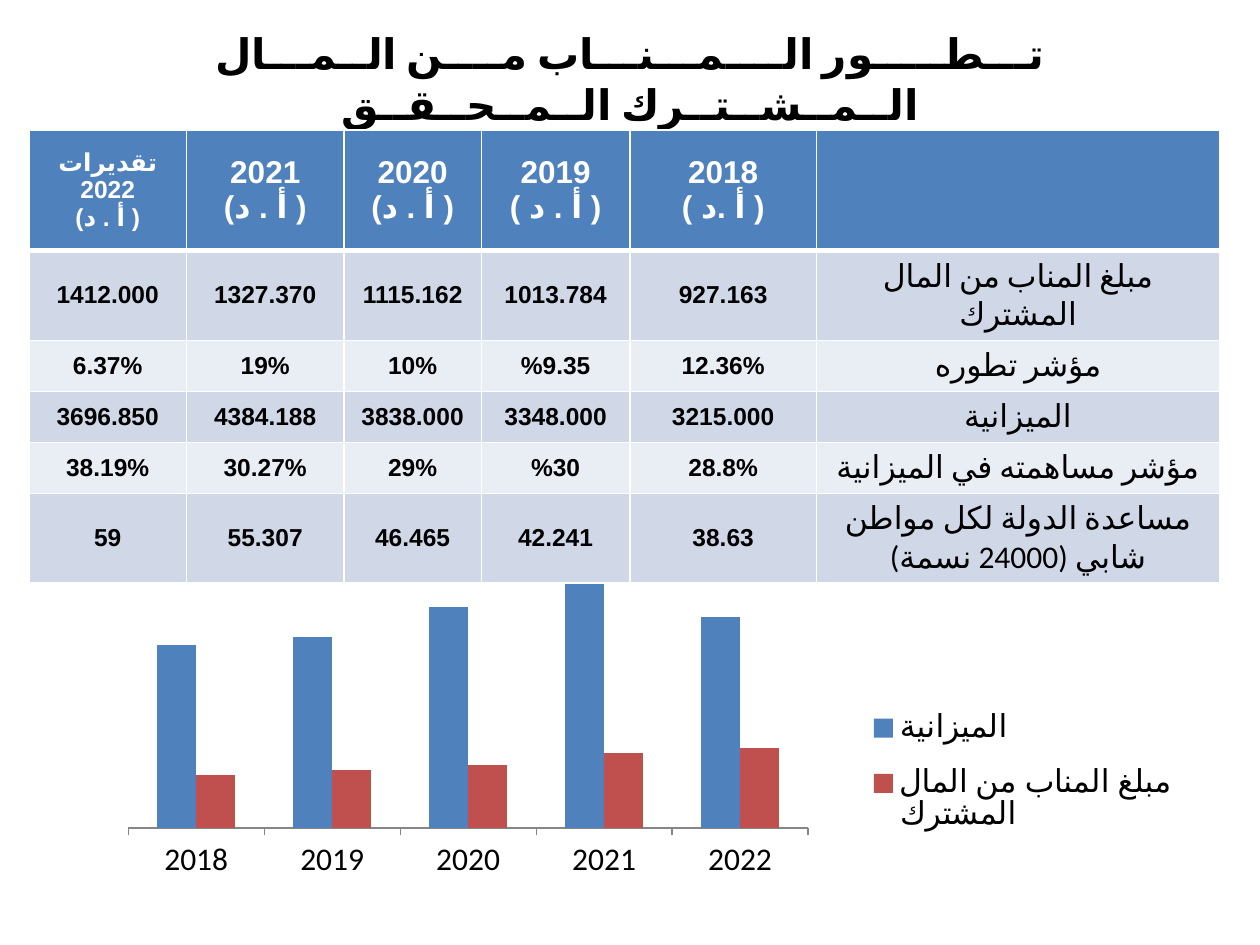
import pptx
import pptx.chart.data
import pptx.dml.color
import pptx.enum.chart
import pptx.enum.text
import pptx.oxml
import pptx.oxml.ns
import pptx.util

Inches = pptx.util.Inches
Pt = pptx.util.Pt
RGBColor = pptx.dml.color.RGBColor

BLACK = RGBColor(0x00, 0x00, 0x00)
WHITE = RGBColor(0xFF, 0xFF, 0xFF)
BLUE = RGBColor(0x4F, 0x81, 0xBD)
RED = RGBColor(0xC0, 0x50, 0x4D)
GRAY = RGBColor(0x86, 0x86, 0x86)
BANDS = (RGBColor(0xD0, 0xD8, 0xE8), RGBColor(0xE9, 0xED, 0xF4))

TITLE_FORMAT = {"name": "Calibri", "size": Pt(24), "bold": True}
YEAR_FORMAT = {"name": "Calibri", "size": Pt(18), "bold": True}
ESTIMATE_FORMAT = {"name": "Calibri", "size": Pt(14), "bold": True}
NUMBER_FORMAT = {"name": "Arial", "size": Pt(14), "bold": True}
LABEL_FORMAT = {"name": "Calibri", "size": Pt(18), "bold": False}

TITLE = "تـــطـــــور الــــمـــنـــاب مــــن الــمـــال الــمــشــتــرك الــمــحــقــق"
SHARE = "مبلغ المناب من المال المشترك"
BUDGET = "الميزانية"
HEADERS = [
    ("تقديرات 2022", "( أ . د)"),
    ("2021", "( أ . د)"),
    ("2020", "( أ . د)"),
    ("2019", "( أ . د )"),
    ("2018", "( أ .د )"),
    (),
]
ROWS = [
    ("1412.000", "1327.370", "1115.162", "1013.784", "927.163", SHARE),
    ("6.37%", "19%", "10%", "%9.35", "12.36%", "مؤشر تطوره"),
    ("3696.850", "4384.188", "3838.000", "3348.000", "3215.000", BUDGET),
    ("38.19%", "30.27%", "29%", "%30", "28.8%", "مؤشر مساهمته في الميزانية"),
    ("59", "55.307", "46.465", "42.241", "38.63",
     "مساعدة الدولة لكل مواطن شابي (24000 نسمة)"),
]
COLUMN_WIDTHS = (1.25, 1.25, 1.09, 1.18, 1.48, 3.2)
ROW_HEIGHTS = (0.96, 0.6, 0.38, 0.38, 0.38, 0.67)
YEARS = ("2018", "2019", "2020", "2021", "2022")
SERIES = [
    (BUDGET, (73, 76, 88, 100, 84), BLUE),
    (SHARE, (21, 23, 25, 30, 32), RED),
]


def format_font(font, values, color):
    for name, value in values.items():
        setattr(font, name, value)
    font.color.rgb = color


def write_paragraph(paragraph, text, values, color, arabic_font="Calibri"):
    paragraph.alignment = pptx.enum.text.PP_ALIGN.CENTER
    run = paragraph.add_run()
    run.text = text
    format_font(run.font, values, color)
    run.font._element.set("lang", "ar-TN")
    run.font._element.append(pptx.oxml.parse_xml(
        f'<a:cs {pptx.oxml.ns.nsdecls("a")} typeface="{arabic_font}"/>'
    ))


def place_title(slide, left, top, width, height):
    shape = slide.shapes.title
    box = {"left": left, "top": top, "width": width, "height": height}
    for name, value in box.items():
        setattr(shape, name, value)
    text_frame = shape.text_frame
    text_frame.auto_size = pptx.enum.text.MSO_AUTO_SIZE.NONE
    text_frame.vertical_anchor = pptx.enum.text.MSO_ANCHOR.MIDDLE
    write_paragraph(text_frame.paragraphs[0], TITLE, TITLE_FORMAT, BLACK)


def fill_cell(cell, color):
    cell.fill.solid()
    cell.fill.fore_color.rgb = color
    cell.vertical_anchor = pptx.enum.text.MSO_ANCHOR.MIDDLE


def write_header(cell, lines, values):
    fill_cell(cell, BLUE)
    cell._tc.get_or_add_tcPr().insert(0, pptx.oxml.parse_xml(
        f'<a:lnB {pptx.oxml.ns.nsdecls("a")} w="{Pt(3)}"><a:solidFill>'
        f'<a:srgbClr val="{WHITE}"/></a:solidFill></a:lnB>'
    ))
    text_frame = cell.text_frame
    for index, line in enumerate(lines):
        paragraph = text_frame.add_paragraph() if index else text_frame.paragraphs[0]
        write_paragraph(paragraph, line, values, WHITE, "Arial")
        paragraph._p.get_or_add_pPr().set("rtl", "1")


def place_table(slide, left, top, width, height):
    table = slide.shapes.add_table(
        len(ROW_HEIGHTS), len(COLUMN_WIDTHS), left, top, width, height
    ).table
    for column, column_width in zip(table.columns, COLUMN_WIDTHS):
        column.width = Inches(column_width)
    for row, row_height in zip(table.rows, ROW_HEIGHTS):
        row.height = Inches(row_height)
    for column_index, lines in enumerate(HEADERS):
        values = YEAR_FORMAT if column_index else ESTIMATE_FORMAT
        write_header(table.cell(0, column_index), lines, values)
    for row_index, texts in enumerate(ROWS):
        for column_index, text in enumerate(texts):
            cell = table.cell(row_index + 1, column_index)
            fill_cell(cell, BANDS[row_index % 2])
            is_label = column_index == len(texts) - 1
            values = LABEL_FORMAT if is_label else NUMBER_FORMAT
            write_paragraph(cell.text_frame.paragraphs[0], text, values, BLACK)


def make_layout(x, y, w, h, target=""):
    parts = [f'<c:layoutTarget val="{target}"/>'] if target else []
    parts += [f'<c:{name}Mode val="edge"/>' for name in "xy"]
    parts += [f'<c:{name} val="{value}"/>' for name, value in zip("xywh", (x, y, w, h))]
    return pptx.oxml.parse_xml(
        f'<c:layout {pptx.oxml.ns.nsdecls("c")}>'
        f'<c:manualLayout>{"".join(parts)}</c:manualLayout></c:layout>'
    )


def set_layout(parent, position, layout):
    for old_layout in parent.findall(pptx.oxml.ns.qn("c:layout")):
        parent.remove(old_layout)
    parent.insert(position, layout)


def place_chart(slide, left, top, width, height):
    data = pptx.chart.data.CategoryChartData()
    data.categories = YEARS
    for name, values, color in SERIES:
        data.add_series(name, values)
    chart = slide.shapes.add_chart(
        pptx.enum.chart.XL_CHART_TYPE.COLUMN_CLUSTERED, left, top, width, height, data
    ).chart
    chart.has_title = False
    format_font(chart.font, LABEL_FORMAT, BLACK)

    plot = chart.plots[0]
    plot.vary_by_categories = False
    plot.gap_width = 150
    plot.overlap = 0
    for series, (name, values, color) in zip(plot.series, SERIES):
        series.format.fill.solid()
        series.format.fill.fore_color.rgb = color

    value_axis = chart.value_axis
    value_format = {"visible": False, "has_major_gridlines": False,
                    "minimum_scale": 0, "maximum_scale": 114}
    for name, value in value_format.items():
        setattr(value_axis, name, value)
    category_axis = chart.category_axis
    category_axis.major_tick_mark = pptx.enum.chart.XL_TICK_MARK.OUTSIDE
    category_axis.format.line.color.rgb = GRAY

    chart.has_legend = True
    chart.legend.position = pptx.enum.chart.XL_LEGEND_POSITION.RIGHT
    chart.legend.include_in_layout = False
    set_layout(chart.legend._element, 1, make_layout(0.686, 0.44, 0.29, 0.41))
    plot_area = chart._chartSpace.chart.plotArea
    set_layout(plot_area, 0, make_layout(0.027, 0.075, 0.611, 0.71, "inner"))


def main():
    presentation = pptx.Presentation()
    presentation.slide_width = Inches(10)
    presentation.slide_height = Inches(7.5)
    slide = presentation.slides.add_slide(presentation.slide_layouts[5])
    place_title(slide, Inches(0.5), Inches(0.3), Inches(9), Inches(0.64))
    place_chart(slide, Inches(0.78), Inches(4.06), Inches(8.83), Inches(3.2))
    place_table(slide, Inches(0.23), Inches(1.03), Inches(9.45), Inches(3.37))
    presentation.save("out.pptx")


if __name__ == "__main__":
    main()
